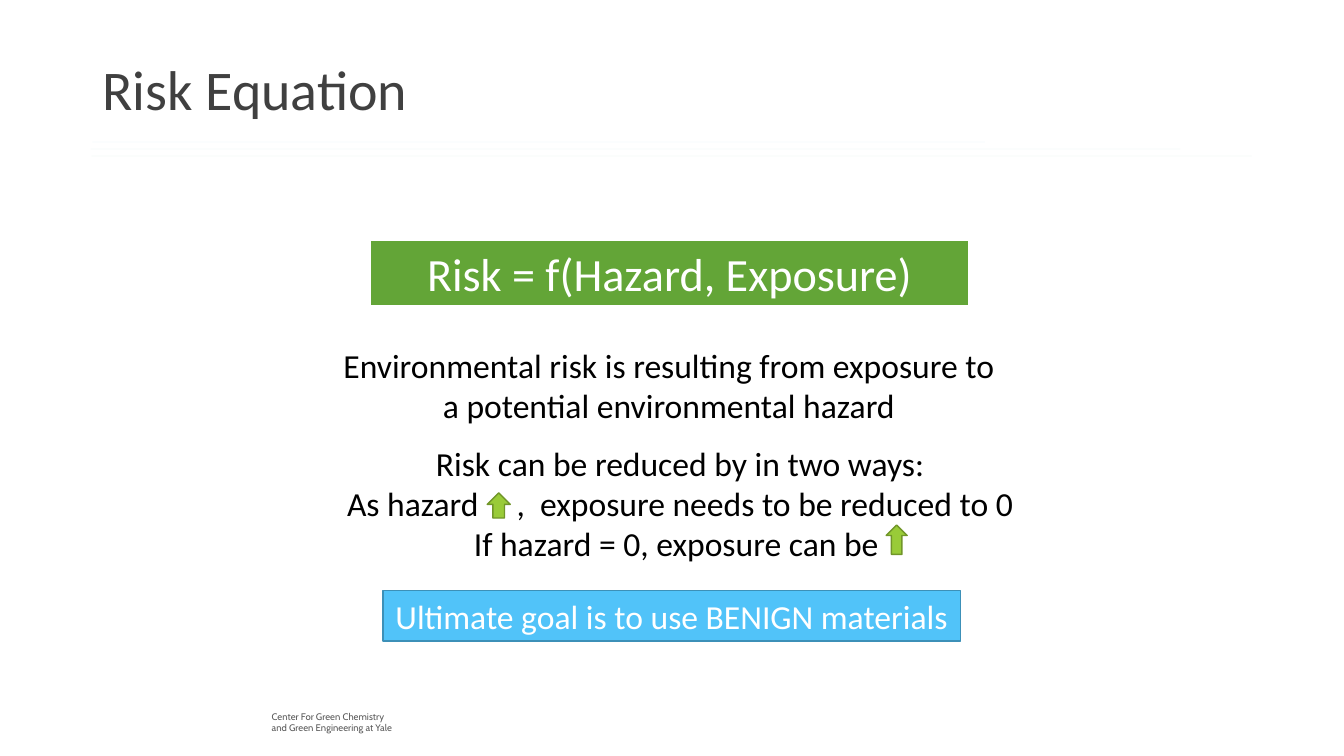
from dataclasses import dataclass
from typing import Optional

from lxml.etree import SubElement
from pptx import Presentation
from pptx.dml.color import RGBColor
from pptx.enum.shapes import MSO_CONNECTOR, MSO_SHAPE
from pptx.enum.text import MSO_ANCHOR, MSO_AUTO_SIZE, PP_ALIGN
from pptx.oxml.ns import qn
from pptx.slide import Slide
from pptx.util import Pt

COLORS = {
    "white": "FFFFFF", "black": "000000", "title": "404040", "foot": "595959",
    "green": "63A537", "lime": "99CB38", "olive": "719629",
    "sky": "51C3F9", "steel": "3C90B8",
    "blue": "4EB3CF", "teal": "44C1A3", "leaf": "37A76F",
}


@dataclass
class Span:
    text: str
    gap: float = 0  # extra letter spacing in points


@dataclass
class Block:
    left: float
    top: float
    width: float
    height: float
    lines: list[list[Span]]
    size: float = 24
    color: str = "black"
    font: str = "Calibri"
    align: PP_ALIGN = PP_ALIGN.CENTER
    wrap: bool = True
    fill: Optional[str] = None
    edge: str = "white"
    weight: float = 1


@dataclass
class Arrow:
    left: float
    top: float
    width: float
    height: float


@dataclass
class Rule:
    left: float
    right: float
    top: float
    color: str


RULES = [
    Rule(66, 703.5, 101.5, "blue"),
    Rule(65, 843, 106.5, "teal"),
    Rule(65.5, 894, 111.5, "leaf"),
]
BLOCKS = [
    Block(187, 504, 134, 24,
          [[Span("Center For Green Chemistry")],
           [Span("and Green Engineering at Yale")]],
          size=6.8, color="foot", font="Cabin", align=PP_ALIGN.LEFT),
    Block(264.5, 171.5, 427.5, 47.5, [[Span("Risk = f(Hazard, Exposure)")]],
          size=33, color="white", fill="green", weight=1.5),
    Block(234, 242.5, 487.5, 65.5,
          [[Span("Environmental risk is resulting from exposure to "
                 "a potential environmental hazard")]]),
    # The wide spaces leave room for the arrow and after the comma
    Block(238.5, 312.5, 494.5, 94.5,
          [[Span("Risk can be reduced by in two ways:")],
           [Span("As hazard"), Span(" ", 21.7), Span(","), Span(" ", 5.4),
            Span("exposure needs to be reduced to 0")],
           [Span("If hazard = 0, exposure can be ")]], wrap=False),
    Block(273.5, 422, 412.5, 36,
          [[Span("Ultimate goal is to use BENIGN materials")]],
          color="white", wrap=False, fill="sky", edge="steel"),
]
ARROWS = [Arrow(348, 352, 16.5, 18), Arrow(633, 375, 15, 21)]


def rgb(name: str) -> RGBColor:
    return RGBColor.from_string(COLORS[name])


def paint(shape, fill: str, edge: str, weight: float) -> None:
    shape.shadow.inherit = False
    shape.fill.solid()
    shape.fill.fore_color.rgb = rgb(fill)
    shape.line.color.rgb = rgb(edge)
    shape.line.width = Pt(weight)


def write(para, span: Span, size: float, color: str, font: str) -> None:
    run = para.add_run()
    run.text = span.text
    run.font.size = Pt(size)
    run.font.name = font
    run.font.color.rgb = rgb(color)
    if span.gap:
        run.font._element.set("spc", str(round(span.gap * 100)))


def draw_rule(slide: Slide, rule: Rule) -> None:
    line = slide.shapes.add_connector(
        MSO_CONNECTOR.STRAIGHT, Pt(rule.left), Pt(rule.top),
        Pt(rule.right), Pt(rule.top))
    line.line.color.rgb = rgb(rule.color)
    line.line.width = Pt(0.5)
    # Nearly clear stroke, no shadow
    tint = next(line._element.spPr.iter(qn("a:srgbClr")))
    SubElement(tint, qn("a:alpha")).set("val", "5000")
    SubElement(line._element.spPr, qn("a:effectLst"))


def draw_block(slide: Slide, block: Block) -> None:
    area = (Pt(block.left), Pt(block.top), Pt(block.width), Pt(block.height))
    if block.fill:
        shape = slide.shapes.add_shape(MSO_SHAPE.RECTANGLE, *area)
        paint(shape, block.fill, block.edge, block.weight)
    else:
        shape = slide.shapes.add_textbox(*area)
    frame = shape.text_frame
    frame.word_wrap = block.wrap
    frame.auto_size = MSO_AUTO_SIZE.SHAPE_TO_FIT_TEXT
    frame.vertical_anchor = MSO_ANCHOR.TOP
    for i, spans in enumerate(block.lines):
        para = frame.add_paragraph() if i else frame.paragraphs[0]
        para.alignment = block.align
        for span in spans:
            write(para, span, block.size, block.color, block.font)


def draw_arrow(slide: Slide, arrow: Arrow) -> None:
    shape = slide.shapes.add_shape(
        MSO_SHAPE.UP_ARROW, Pt(arrow.left), Pt(arrow.top),
        Pt(arrow.width), Pt(arrow.height))
    paint(shape, "lime", "olive", 1)


def set_title(slide: Slide, text: str) -> None:
    title = slide.shapes.title
    title.left, title.top = Pt(66), Pt(14)
    title.width, title.height = Pt(828), Pt(104)
    frame = title.text_frame
    frame.auto_size = MSO_AUTO_SIZE.NONE
    frame.vertical_anchor = MSO_ANCHOR.MIDDLE
    para = frame.paragraphs[0]
    para.alignment = PP_ALIGN.LEFT
    para.line_spacing = 0.9
    write(para, Span(text), 40, "title", "Calibri")


def main() -> None:
    deck = Presentation()
    deck.slide_width, deck.slide_height = Pt(960), Pt(540)
    slide = deck.slides.add_slide(deck.slide_layouts[5])
    set_title(slide, "Risk Equation")
    # Faint rules under the title
    for rule in RULES:
        draw_rule(slide, rule)
    # Equation, statements and footer
    for block in BLOCKS:
        draw_block(slide, block)
    # Arrows for "increases"
    for arrow in ARROWS:
        draw_arrow(slide, arrow)
    deck.save("out.pptx")


if __name__ == "__main__":
    main()
